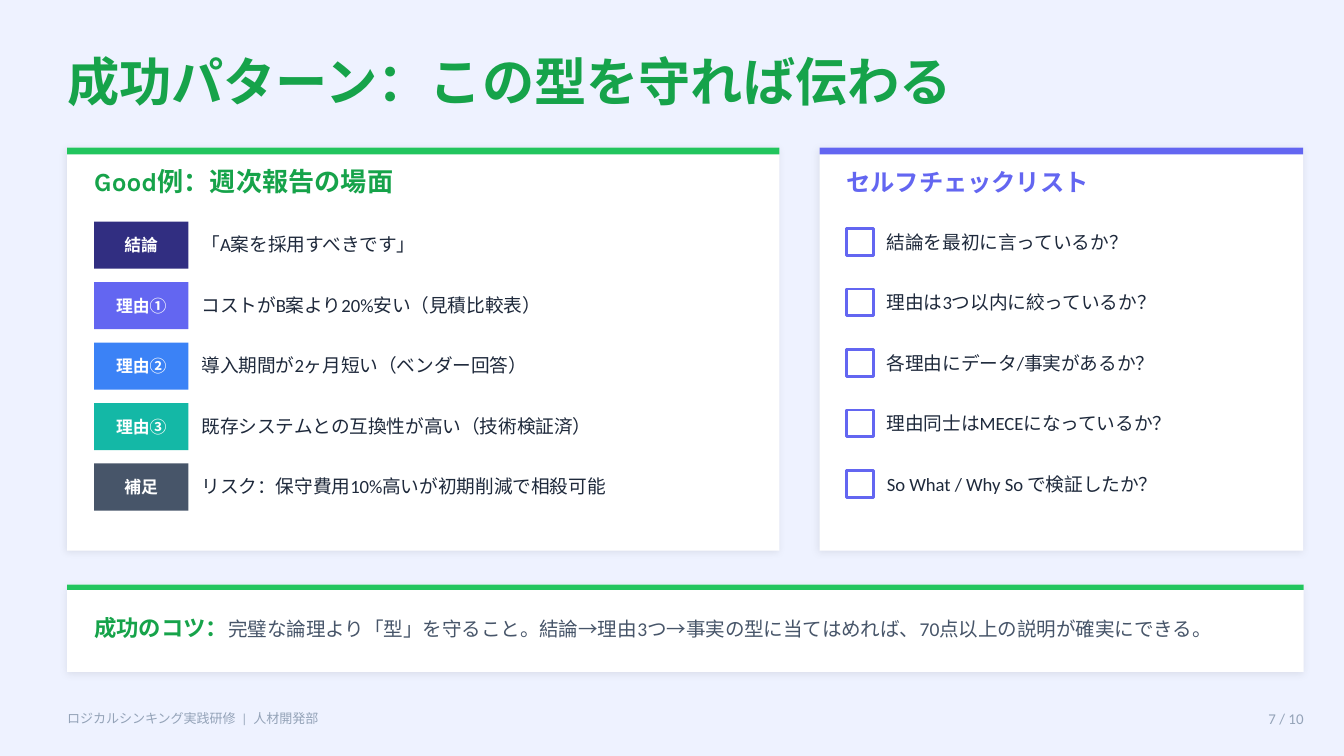
from lxml import etree
from pptx import Presentation
from pptx.dml.color import RGBColor
from pptx.enum.shapes import MSO_SHAPE
from pptx.enum.text import MSO_ANCHOR, PP_ALIGN
from pptx.oxml.ns import qn
from pptx.util import Cm, Pt

RECT = MSO_SHAPE.RECTANGLE
MIDDLE = MSO_ANCHOR.MIDDLE
LEFT, CENTER, RIGHT = PP_ALIGN.LEFT, PP_ALIGN.CENTER, PP_ALIGN.RIGHT

PAPER = RGBColor(0xEE, 0xF2, 0xFF)
WHITE = RGBColor(0xFF, 0xFF, 0xFF)
GREEN = RGBColor(0x22, 0xC5, 0x5E)
FOREST = RGBColor(0x16, 0xA3, 0x4A)
NAVY = RGBColor(0x31, 0x2E, 0x81)
INDIGO = RGBColor(0x63, 0x66, 0xF1)
BLUE = RGBColor(0x3B, 0x82, 0xF6)
TEAL = RGBColor(0x14, 0xB8, 0xA6)
SLATE = RGBColor(0x47, 0x55, 0x69)
INK = RGBColor(0x1E, 0x29, 0x3B)
GRAY = RGBColor(0x94, 0xA3, 0xB8)

HEAD, BODY = "Karla", "Calibri"
EDGE = 1.27
INSET = 1.78
STEP = 1.143 
TOP = 4.19

STEPS = [
    ("結論", NAVY, "「A案を採用すべきです」"),
    ("理由①", INDIGO, "コストがB案より20%安い（見積比較表）"),
    ("理由②", BLUE, "導入期間が2ヶ月短い（ベンダー回答）"),
    ("理由③", TEAL, "既存システムとの互換性が高い（技術検証済）"),
    ("補足", SLATE, "リスク：保守費用10%高いが初期削減で相殺可能"),
]
CHECKS = [
    "結論を最初に言っているか？",
    "理由は3つ以内に絞っているか？",
    "各理由にデータ/事実があるか？",
    "理由同士はMECEになっているか？",
    "So What / Why So で検証したか？",
]


def add_rect(slide, x, y, w, h, fill, line=None):
    rect = slide.shapes.add_shape(RECT, Cm(x), Cm(y), Cm(w), Cm(h))
    rect.shadow.inherit = False
    rect.fill.solid()
    rect.fill.fore_color.rgb = fill
    if line is None:
        rect.line.fill.background()
    else:
        rect.line.color.rgb = line
        rect.line.width = Pt(1.5)
    return rect


def add_shadow(shape):
    effects = shape._element.spPr.find(qn("a:effectLst"))
    shadow = etree.SubElement(
        effects, qn("a:outerShdw"), blurRad=str(Pt(4)), dist=str(Pt(1)),
        dir="8100000", algn="bl", rotWithShape="0")
    color = etree.SubElement(shadow, qn("a:srgbClr"), val="000000")
    etree.SubElement(color, qn("a:alpha"), val="8000")


def add_card(slide, x, y, w, h, bar, color):
    add_shadow(add_rect(slide, x, y, w, h, WHITE))
    add_rect(slide, x, y, w, bar, color)


def add_text(slide, x, y, w, h, runs, align=LEFT):
    box = slide.shapes.add_textbox(Cm(x), Cm(y), Cm(w), Cm(h))
    frame = box.text_frame
    frame.word_wrap = True
    frame.vertical_anchor = MIDDLE
    frame.margin_left = frame.margin_right = 0
    frame.margin_top = frame.margin_bottom = 0
    para = frame.paragraphs[0]
    para.alignment = align
    for text, size, face, color in runs:
        run = para.add_run()
        run.text = text
        run.font.size = Pt(size)
        run.font.name = face
        run.font.bold = face == HEAD
        run.font.color.rgb = color


def add_step(slide, y, label, color, text):
    add_rect(slide, INSET, y, 1.78, 0.89, color)
    add_text(slide, INSET, y, 1.78, 0.89, [(label, 9, HEAD, WHITE)], CENTER)
    add_text(slide, 3.81, y + 0.05, 10.41, 0.76, [(text, 10, BODY, INK)])


def add_check(slide, y, text):
    add_rect(slide, 16, y + 0.13, 0.51, 0.51, WHITE, INDIGO)
    add_text(slide, 16.76, y, 7.24, 0.76, [(text, 10, BODY, INK)])


def main():
    deck = Presentation()
    deck.slide_width, deck.slide_height = Cm(25.4), Cm(14.29)
    slide = deck.slides.add_slide(deck.slide_layouts[6])
    slide.background.fill.solid()
    slide.background.fill.fore_color.rgb = PAPER

    add_text(slide, EDGE, 0.76, 22.86, 1.52,
             [("成功パターン：この型を守れば伝わる", 28, HEAD, FOREST)])

    add_card(slide, EDGE, 2.79, 13.46, 7.62, 0.13, GREEN)
    add_text(slide, INSET, 3.05, 11.43, 0.76,
             [("Good例：週次報告の場面", 14, HEAD, FOREST)])
    for i, step in enumerate(STEPS):
        add_step(slide, TOP + i * STEP, *step)

    add_card(slide, 15.49, 2.79, 9.14, 7.62, 0.13, INDIGO)
    add_text(slide, 16, 3.05, 8.13, 0.76,
             [("セルフチェックリスト", 13, HEAD, INDIGO)])
    for i, text in enumerate(CHECKS):
        add_check(slide, TOP + i * STEP, text)

    add_card(slide, EDGE, 11.05, 23.37, 1.65, 0.1, GREEN)
    add_text(slide, INSET, 11.23, 22.35, 1.27, [
        ("成功のコツ：", 12, HEAD, FOREST),
        ("完璧な論理より「型」を守ること。結論→理由3つ→事実の型に"
         "当てはめれば、70点以上の説明が確実にできる。", 10.5, BODY, SLATE),
    ])

    add_text(slide, 23.11, 13.26, 1.53, 0.64,
             [("7 / 10", 8, BODY, GRAY)], RIGHT)
    add_text(slide, EDGE, 13.26, 12.19, 0.64,
             [("ロジカルシンキング実践研修  |  人材開発部", 7, BODY, GRAY)])
    deck.save("out.pptx")


if __name__ == "__main__":
    main()
